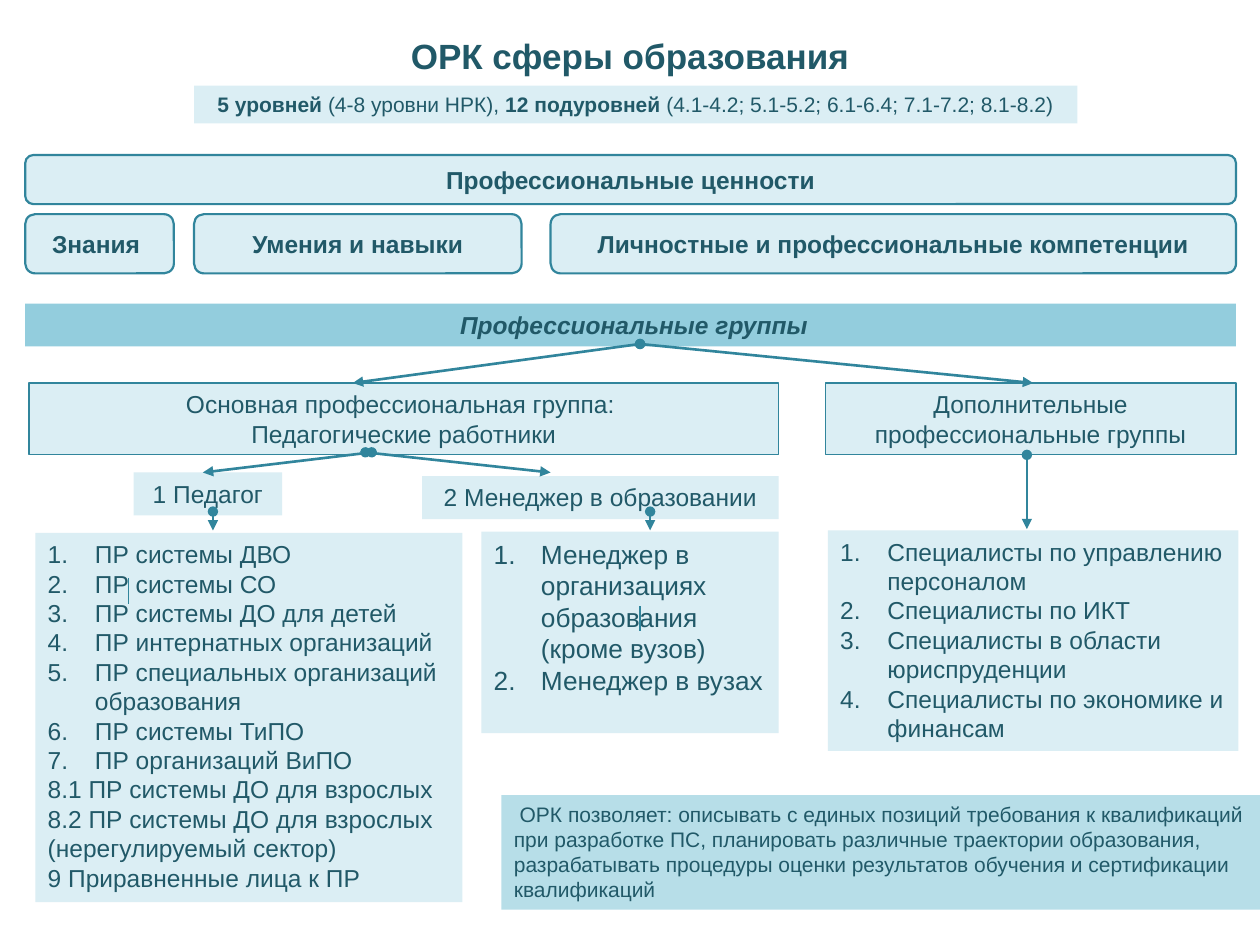
import pptx
import pptx.util
import pptx.dml.color
import pptx.enum.shapes
import pptx.enum.text
import pptx.oxml
import pptx.oxml.ns
import lxml.etree

Inches = pptx.util.Inches
Pt = pptx.util.Pt
SHAPE = pptx.enum.shapes.MSO_SHAPE
ALIGN = pptx.enum.text.PP_ALIGN
ANCHOR = pptx.enum.text.MSO_ANCHOR
INK, EDGE = "215968", "31859C"
PALE, SOFT, DEEP = "DBEEF4", "B7DEE8", "93CDDD"


def color(code):
    return pptx.dml.color.RGBColor.from_string(code)


def tag(parent, name, **attrs):
    """Append a drawing element to the parent."""
    return lxml.etree.SubElement(parent, pptx.oxml.ns.qn(name), **attrs)


def style(run, size, bold=False, italic=False):
    font = run.font
    font.name, font.size = "Arial", Pt(size)
    font.bold, font.italic = bold, italic
    font.color.rgb = color(INK)


def panel(slide, box, lines, size=14, fill=PALE, edge=0, kind=SHAPE.RECTANGLE,
          bold=False, italic=False, align=ALIGN.CENTER):
    """Add a filled box holding one paragraph per line."""
    shape = slide.shapes.add_shape(kind, *map(Inches, box))
    shape.shadow.inherit = False
    shape.fill.solid()
    shape.fill.fore_color.rgb = color(fill)
    if edge:
        shape.line.color.rgb = color(EDGE)
        shape.line.width = Pt(edge)
    else:
        shape.line.fill.background()
    frame = shape.text_frame
    frame.word_wrap = True
    frame.vertical_anchor = ANCHOR.TOP
    for i, line in enumerate(lines):
        para = frame.add_paragraph() if i else frame.paragraphs[0]
        para.text = line
        para.alignment = align
        for run in para.runs:
            style(run, size, bold, italic)
    return shape


def pill(slide, box, text):
    shape = panel(slide, box, [text], edge=1.25, bold=True,
                  kind=SHAPE.ROUNDED_RECTANGLE)
    shape.text_frame.word_wrap = False
    shape.text_frame.vertical_anchor = ANCHOR.MIDDLE


def roster(slide, box, items, rest=(), size=14):
    """Add a box with numbered items, then plain lines."""
    shape = panel(slide, box, [*items, *rest], size, align=ALIGN.LEFT)
    for para in shape.text_frame.paragraphs[:len(items)]:
        props = para._p.get_or_add_pPr()
        props.set("marL", str(Inches(0.375)))
        props.set("indent", str(Inches(-0.375)))
        tag(props, "a:buFont", typeface="+mj-lt")
        tag(props, "a:buAutoNum", type="arabicPeriod")


def link(slide, start, end, width=1.5, arrow=True):
    line = slide.shapes.add_connector(
        pptx.enum.shapes.MSO_CONNECTOR.STRAIGHT, *map(Inches, (*start, *end)))
    line.line.color.rgb = color(EDGE)
    line.line.width = Pt(width)
    if arrow:
        outline = line.line._get_or_add_ln()
        tag(outline, "a:headEnd", type="oval")
        tag(outline, "a:tailEnd", type="triangle")
    tag(line._element.spPr, "a:effectLst")


def header(slide, x, y, w):
    title = slide.shapes.title
    title.left, title.top = Inches(x), Inches(y)
    title.width, title.height = Inches(w), Inches(0.43)
    frame = title.text_frame
    frame.text = "ОРК сферы образования"
    frame.auto_size = pptx.enum.text.MSO_AUTO_SIZE.NONE
    frame.vertical_anchor = ANCHOR.MIDDLE
    para = frame.paragraphs[0]
    para.alignment, para.line_spacing = ALIGN.CENTER, 0.9
    style(para.runs[0], 20, bold=True)

    levels = panel(slide, (x + 1.04, y + 0.43, 7.01, 0.3), [""])
    parts = ("5 уровней ", "(4-8 уровни НРК), ", "12 подуровней ",
             "(4.1-4.2; 5.1-5.2; 6.1-6.4; 7.1-7.2; 8.1-8.2)")
    for i, part in enumerate(parts):
        run = levels.text_frame.paragraphs[0].add_run()
        run.text = part
        style(run, 12, bold=i % 2 == 0)


def values(slide, x, y, w):
    pill(slide, (x, y, w, 0.39), "Профессиональные ценности")
    for dx, wide, text in (
            (0, 1.18, "Знания "),
            (1.34, 2.6, "Умения и навыки"),
            (4.17, 5.44, "Личностные и профессиональные компетенции")):
        pill(slide, (x + dx, y + 0.47, wide, 0.47), text)


def groups(slide, x, y, w):
    panel(slide, (x, y, w, 0.34), [" Профессиональные группы"],
          fill=DEEP, bold=True, italic=True)
    for dx, wide, tip, lines in (
            (0.03, 5.95, 2.6, ["Основная профессиональная группа: ",
                               "Педагогические работники"]),
            (6.35, 3.26, 8, ["Дополнительные профессиональные группы"])):
        panel(slide, (x + dx, y + 0.63, wide, 0.57), lines, edge=0.75)
        link(slide, (x + 4.88, y + 0.32), (x + tip, y + 0.63))


def staff(slide, x, y):
    """Place both branches of the main group under its box."""
    panel(slide, (x + 0.78, y + 0.16, 1.18, 0.34), ["1 Педагог"])
    panel(slide, (x + 3.07, y + 0.19, 2.83, 0.34),
          ["2 Менеджер в образовании"])
    roster(slide, (x, y + 0.64, 3.39, 2.93), [
        "ПР системы ДВО",
        "ПР системы СО",
        "ПР системы ДО для детей",
        "ПР интернатных организаций",
        "ПР специальных организаций образования",
        "ПР системы ТиПО",
        "ПР организаций ВиПО",
    ], [
        "8.1 ПР системы ДО для взрослых",
        "8.2 ПР системы ДО для взрослых (нерегулируемый сектор)",
        "9 Приравненные лица к ПР",
    ])
    roster(slide, (x + 3.54, y + 0.63, 2.36, 1.6), [
        "Менеджер в организациях образования (кроме вузов)",
        "Менеджер в вузах",
    ], size=15)
    for root, tip, drop in ((2.67, 1.33, 1.41), (2.62, 4.09, 4.88)):
        link(slide, (x + root, y), (x + tip, y + 0.16))
        link(slide, (x + drop, y + 0.47), (x + drop, y + 0.62))
    for dx, dy in ((0.74, 1), (4.8, 1.22)):
        link(slide, (x + dx, y + dy), (x + dx, y + dy + 0.2), 1, arrow=False)


def extra(slide, x, y, w):
    """Place the specialists under the additional groups."""
    roster(slide, (x, y + 0.6, w, 1.75), [
        "Специалисты по управлению персоналом",
        "Специалисты по ИКТ",
        "Специалисты в области юриспруденции",
        "Специалисты по экономике и финансам",
    ])
    link(slide, (x + 1.58, y), (x + 1.58, y + 0.59))


def main():
    deck = pptx.Presentation()
    deck.slide_width, deck.slide_height = Inches(10), Inches(7.5)
    slide = deck.slides.add_slide(deck.slide_layouts[5])
    header(slide, 0.5, 0.25, 9)
    values(slide, 0.2, 1.23, 9.61)
    groups(slide, 0.2, 2.41, 9.61)
    staff(slide, 0.28, 3.59)
    extra(slide, 6.57, 3.61, 3.26)
    panel(slide, (3.98, 6.31, 6.02, 0.91), [
        " ОРК позволяет: описывать с единых позиций требования к "
        "квалификаций при разработке ПС, планировать различные траектории "
        "образования, разрабатывать процедуры оценки результатов обучения и "
        "сертификации квалификаций"], 12, SOFT, align=ALIGN.LEFT)
    deck.save("out.pptx")


if __name__ == "__main__":
    main()
